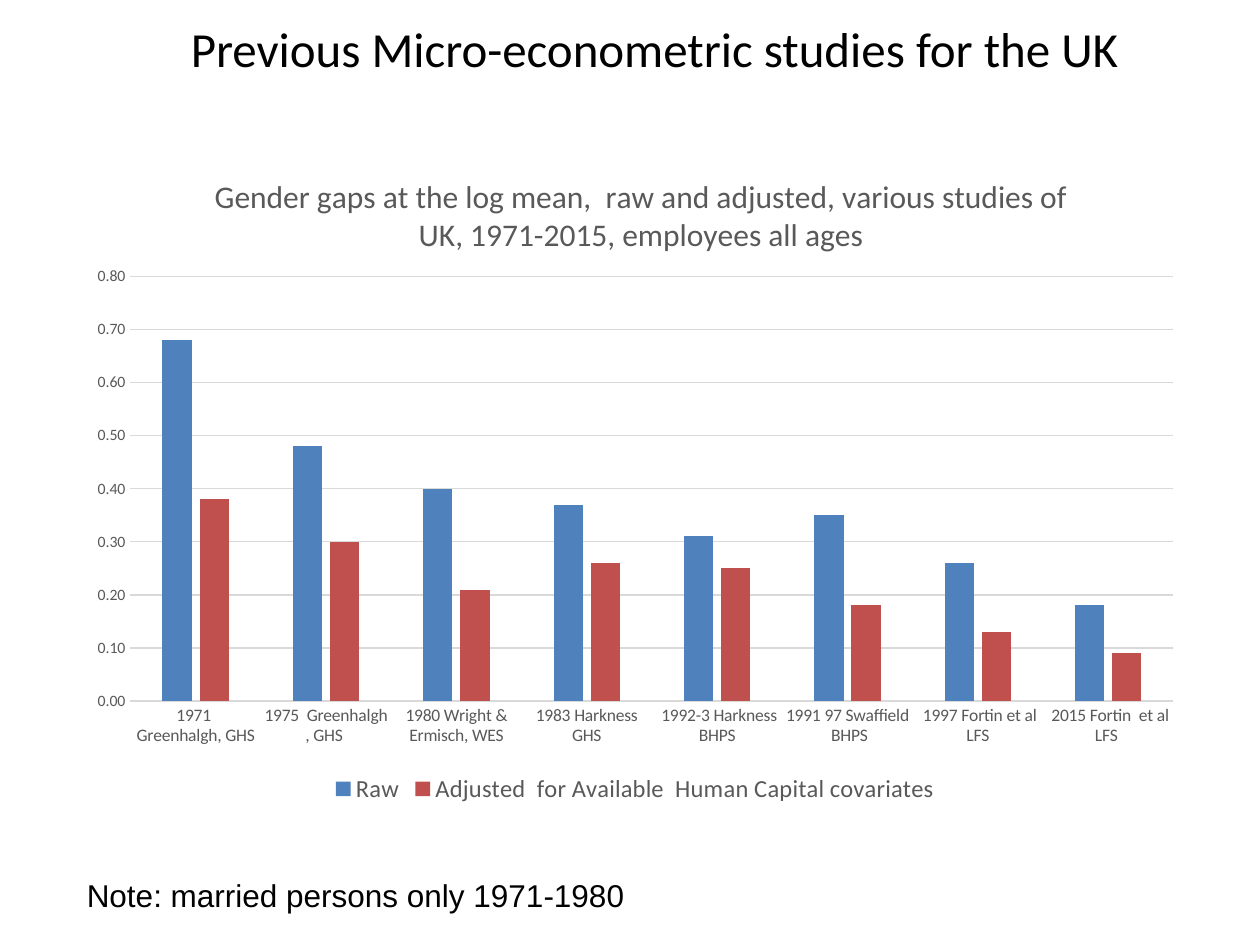
from dataclasses import dataclass

from lxml import etree
from pptx import Presentation
from pptx.chart.data import CategoryChartData
from pptx.dml.color import RGBColor
from pptx.enum.chart import XL_CHART_TYPE, XL_LEGEND_POSITION, XL_TICK_MARK
from pptx.enum.text import PP_ALIGN
from pptx.oxml.ns import qn
from pptx.util import Cm, Pt

BLACK = RGBColor(0x00, 0x00, 0x00)
GREY = RGBColor(0x59, 0x59, 0x59)
LIGHT_GREY = RGBColor(0xD9, 0xD9, 0xD9)
BLUE = RGBColor(0x4F, 0x81, 0xBD)
RED = RGBColor(0xC0, 0x50, 0x4D)

CLUSTERED = XL_CHART_TYPE.COLUMN_CLUSTERED
BOTTOM = XL_LEGEND_POSITION.BOTTOM
NO_TICK = XL_TICK_MARK.NONE
CENTER, LEFT = PP_ALIGN.CENTER, PP_ALIGN.LEFT


@dataclass
class Label:
    text: str
    left: float
    top: float
    width: float
    height: float
    size: int
    font: str
    align: PP_ALIGN


@dataclass
class GapSeries:
    name: str
    values: tuple
    color: RGBColor


LABELS = [
    Label("Previous Micro-econometric studies for the UK",
          3.1, 0.25, 20.19, 1.45, 28, "Calibri", CENTER),
    Label("Note: married persons only 1971-1980",
          1.5, 17.53, 11.99, 1.02, 18, "Arial", LEFT),
]
CHART_TITLE = ("Gender gaps at the log mean,  raw and adjusted, various studies of "
               "UK, 1971-2015, employees all ages")
STUDIES = [
    "1971  Greenhalgh, GHS", "1975  Greenhalgh , GHS ",
    "1980 Wright & Ermisch, WES", "1983 Harkness GHS",
    " 1992-3 Harkness BHPS", "1991 97 Swaffield  BHPS",
    " 1997 Fortin et al LFS", " 2015 Fortin  et al LFS ",
]
GAPS = [
    GapSeries("Raw", (0.68, 0.48, 0.40, 0.37, 0.31, 0.35, 0.26, 0.18), BLUE),
    GapSeries("Adjusted  for Available  Human Capital covariates",
              (0.38, 0.30, 0.21, 0.26, 0.25, 0.18, 0.13, 0.09), RED),
]


def style_font(font, size: int, color: RGBColor, name: str = "Calibri") -> None:
    font.size = Pt(size)
    font.name = name
    font.bold = False
    font.color.rgb = color


def add_label(slide, label: Label) -> None:
    box = slide.shapes.add_textbox(Cm(label.left), Cm(label.top),
                                   Cm(label.width), Cm(label.height))
    box.text_frame.word_wrap = True
    paragraph = box.text_frame.paragraphs[0]
    paragraph.alignment = label.align
    run = paragraph.add_run()
    run.text = label.text
    style_font(run.font, label.size, BLACK, label.font)


def set_layout(parent, index: int, **settings) -> None:
    """Place a chart part by fractions of the chart area."""
    for old_layout in parent.findall(qn("c:layout")):
        parent.remove(old_layout)
    layout = etree.Element(qn("c:layout"))
    manual = etree.SubElement(layout, qn("c:manualLayout"))
    for tag, value in settings.items():
        etree.SubElement(manual, qn(f"c:{tag}")).set("val", str(value))
    parent.insert(index, layout)


def style_axis(axis, size: int) -> None:
    axis.major_tick_mark = NO_TICK
    axis.minor_tick_mark = NO_TICK
    style_font(axis.tick_labels.font, size, GREY)


def style_line(line) -> None:
    line.color.rgb = LIGHT_GREY
    line.width = Pt(0.75)


def add_gap_chart(slide) -> None:
    data = CategoryChartData(number_format="0.00")
    data.categories = STUDIES
    for gap in GAPS:
        data.add_series(gap.name, gap.values)
    chart = slide.shapes.add_chart(CLUSTERED, Cm(1.5), Cm(2.72),
                                   Cm(22.61), Cm(13.59), data).chart
    style_font(chart.font, 10, BLACK)

    # Title
    chart.has_title = True
    run = chart.chart_title.text_frame.paragraphs[0].add_run()
    run.text = CHART_TITLE
    style_font(run.font, 18, GREY)

    # Axes
    style_axis(chart.category_axis, 10)
    style_line(chart.category_axis.format.line)
    value_axis = chart.value_axis
    style_axis(value_axis, 9)
    value_axis.minimum_scale, value_axis.maximum_scale = 0, 0.8
    value_axis.major_unit = 0.1
    value_axis.tick_labels.number_format = "0.00"
    value_axis.tick_labels.number_format_is_linked = False
    value_axis.format.line.fill.background()
    style_line(value_axis.major_gridlines.format.line)

    # Columns
    plot = chart.plots[0]
    plot.vary_by_categories = False
    plot.gap_width, plot.overlap = 219, -27
    for series, gap in zip(plot.series, GAPS):
        series.format.fill.solid()
        series.format.fill.fore_color.rgb = gap.color

    # Legend
    chart.has_legend = True
    chart.legend.position = BOTTOM
    chart.legend.include_in_layout = False
    style_font(chart.legend.font, 14, GREY)

    # Positions of title (after its text) and plot area
    chart_element = chart.element.find(qn("c:chart"))
    set_layout(chart_element.find(qn("c:title")), 1,
               xMode="edge", yMode="edge", x=0.12, y=0.05)
    set_layout(chart_element.find(qn("c:plotArea")), 0,
               layoutTarget="inner", xMode="edge", yMode="edge",
               x=0.05, y=0.21, w=0.93, h=0.63)


def main() -> None:
    presentation = Presentation()
    presentation.slide_width, presentation.slide_height = Cm(25.4), Cm(19.05)
    slide = presentation.slides.add_slide(presentation.slide_layouts[6])
    for label in LABELS:
        add_label(slide, label)
    add_gap_chart(slide)
    presentation.save("out.pptx")


if __name__ == "__main__":
    main()
